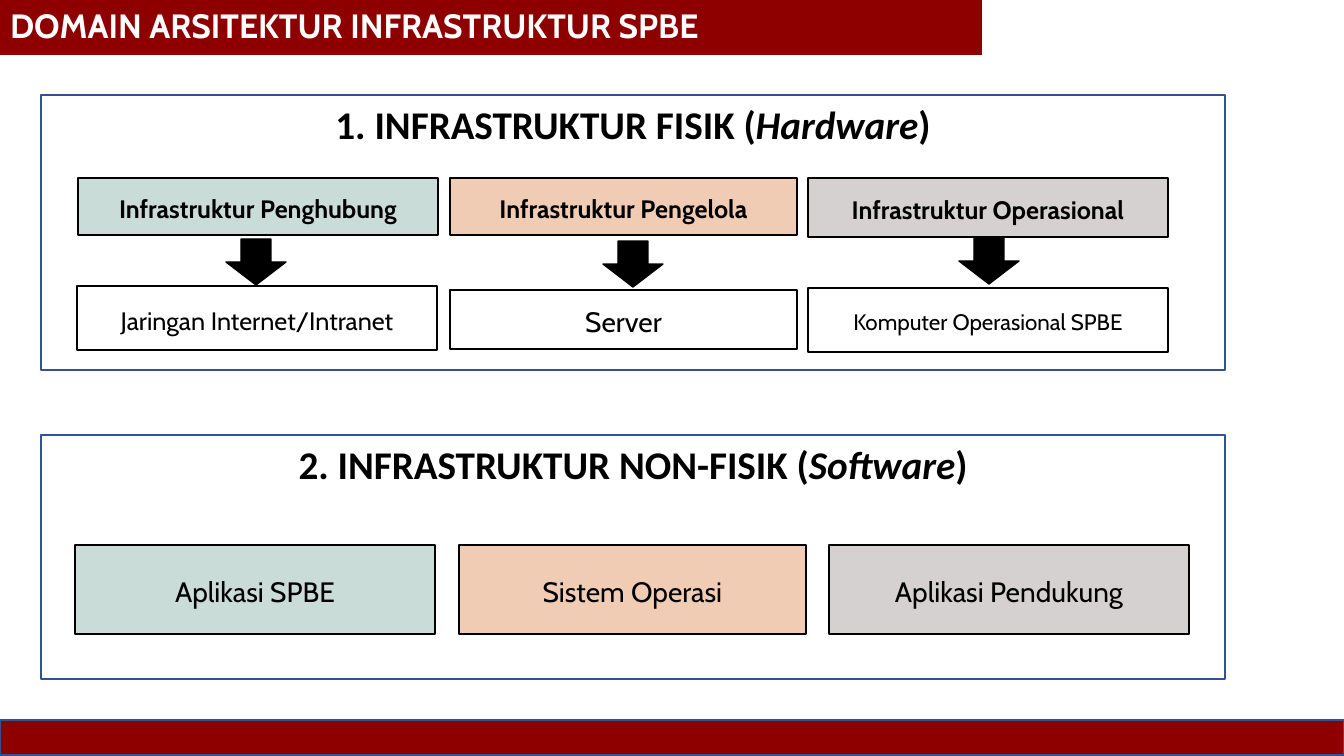
import pptx
import pptx.dml.color
import pptx.enum.shapes
import pptx.enum.text
import pptx.util

PX = 9071  # EMU per px, 100.8 px to the inch
RED, BLUE, BLACK, WHITE = "8E0000", "31538F", "000000", "FFFFFF"
COLUMN_FILLS = ["CADCD8", "F1CCB5", "D5D1D1"]
SHAPE = pptx.enum.shapes.MSO_SHAPE
ALIGN = pptx.enum.text.PP_ALIGN
ANCHOR = pptx.enum.text.MSO_ANCHOR

# Each box: label, size, (left, top, width, height)
CATEGORIES = [
    ("Infrastruktur Penghubung", 18, (78, 178, 360, 57)),
    ("Infrastruktur Pengelola", 18, (450, 178, 347, 57)),
    ("Infrastruktur Operasional", 18, (808, 178, 360, 59)),
]
EXAMPLES = [
    ("Jaringan Internet/Intranet", 18, (77, 286, 360, 64)),
    ("Server", 20, (450, 290, 347, 59)),
    ("Komputer Operasional SPBE", 16, (808, 288, 360, 64)),
]
ARROWS = [(226, 239), (603, 241), (959, 238)]
SOFTWARE = [
    ("Aplikasi SPBE", 20, (75, 545, 360, 89)),
    ("Sistem Operasi", 20, (459, 545, 347, 89)),
    ("Aplikasi Pendukung", 20, (829, 545, 360, 89)),
]


def rgb(value):
    return pptx.dml.color.RGBColor.from_string(value)


def fill_with(sp, color):
    sp.fill.solid()
    sp.fill.fore_color.rgb = rgb(color)


def add_run(p, text, color=BLACK, **font):
    r = p.add_run()
    r.text = text
    r.font.color.rgb = rgb(color)
    for name, value in font.items():
        setattr(r.font, name, value)


def add_block(shapes, box, fill, line=BLACK, kind=SHAPE.RECTANGLE):
    sp = shapes.add_shape(kind, *(n * PX for n in box))
    sp.shadow.inherit = False
    fill_with(sp, fill)
    sp.line.color.rgb = rgb(line)
    sp.line.width = pptx.util.Pt(1)
    return sp


def add_label_box(shapes, text, size, box, fill, bold=False):
    tf = add_block(shapes, box, fill).text_frame
    tf.word_wrap = True
    tf.vertical_anchor = ANCHOR.MIDDLE
    p = tf.paragraphs[0]
    p.alignment = ALIGN.CENTER
    p.line_spacing = 1.13
    add_run(p, text, name="Cabin", size=pptx.util.Pt(size), bold=bold)


def add_panel(slide, box, heading, english):
    """Add a framed group headed by text with an italic English term; return its shapes."""
    shapes = slide.shapes.add_group_shape().shapes
    tf = add_block(shapes, box, WHITE, BLUE).text_frame
    tf.word_wrap = True
    tf.vertical_anchor = ANCHOR.TOP
    p = tf.paragraphs[0]
    p.alignment = ALIGN.CENTER
    for text, italic in [(heading + " (", False), (english, True), (")", False)]:
        add_run(p, text, name="Calibri", size=pptx.util.Pt(28), bold=True, italic=italic)
    return shapes


def add_title(slide, text, box):
    sp = slide.shapes.title
    for name, value in zip(("left", "top", "width", "height"), box):
        setattr(sp, name, value * PX)
    fill_with(sp, RED)
    tf = sp.text_frame
    settings = {"word_wrap": True, "vertical_anchor": ANCHOR.MIDDLE,
                "auto_size": pptx.enum.text.MSO_AUTO_SIZE.NONE}
    for name, value in settings.items():
        setattr(tf, name, value)
    p = tf.paragraphs[0]
    p.alignment = ALIGN.LEFT
    add_run(p, text, WHITE, name="Cabin", size=pptx.util.Pt(24), bold=True)


def main():
    prs = pptx.Presentation()
    prs.slide_width, prs.slide_height = 1344 * PX, 756 * PX
    slide = prs.slides.add_slide(prs.slide_layouts[5])

    add_block(slide.shapes, (0, 720, 1344, 35), RED, BLUE)
    add_title(slide, "DOMAIN ARSITEKTUR INFRASTRUKTUR SPBE", (0, -5, 982, 60))

    software = add_panel(slide, (41, 435, 1184, 244),
                         "2. INFRASTRUKTUR NON-FISIK", "Software")
    for label, fill in zip(SOFTWARE, COLUMN_FILLS):
        add_label_box(software, *label, fill)

    hardware = add_panel(slide, (41, 95, 1184, 275),
                         "1. INFRASTRUKTUR FISIK", "Hardware")
    for category, example, arrow, fill in zip(CATEGORIES, EXAMPLES, ARROWS, COLUMN_FILLS):
        add_label_box(hardware, *category, fill, bold=True)
        add_label_box(hardware, *example, WHITE)
        add_block(hardware, (*arrow, 60, 46), BLACK, kind=SHAPE.DOWN_ARROW)

    prs.save("out.pptx")


if __name__ == "__main__":
    main()
